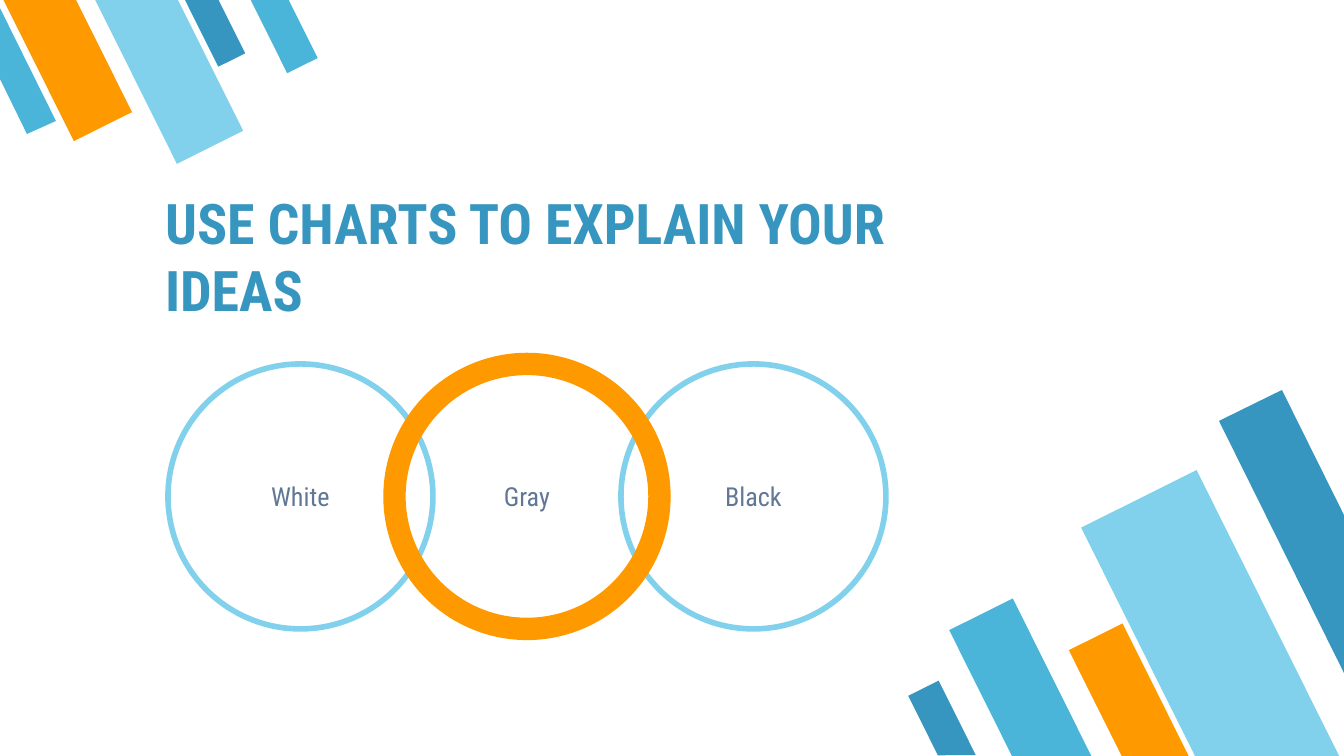
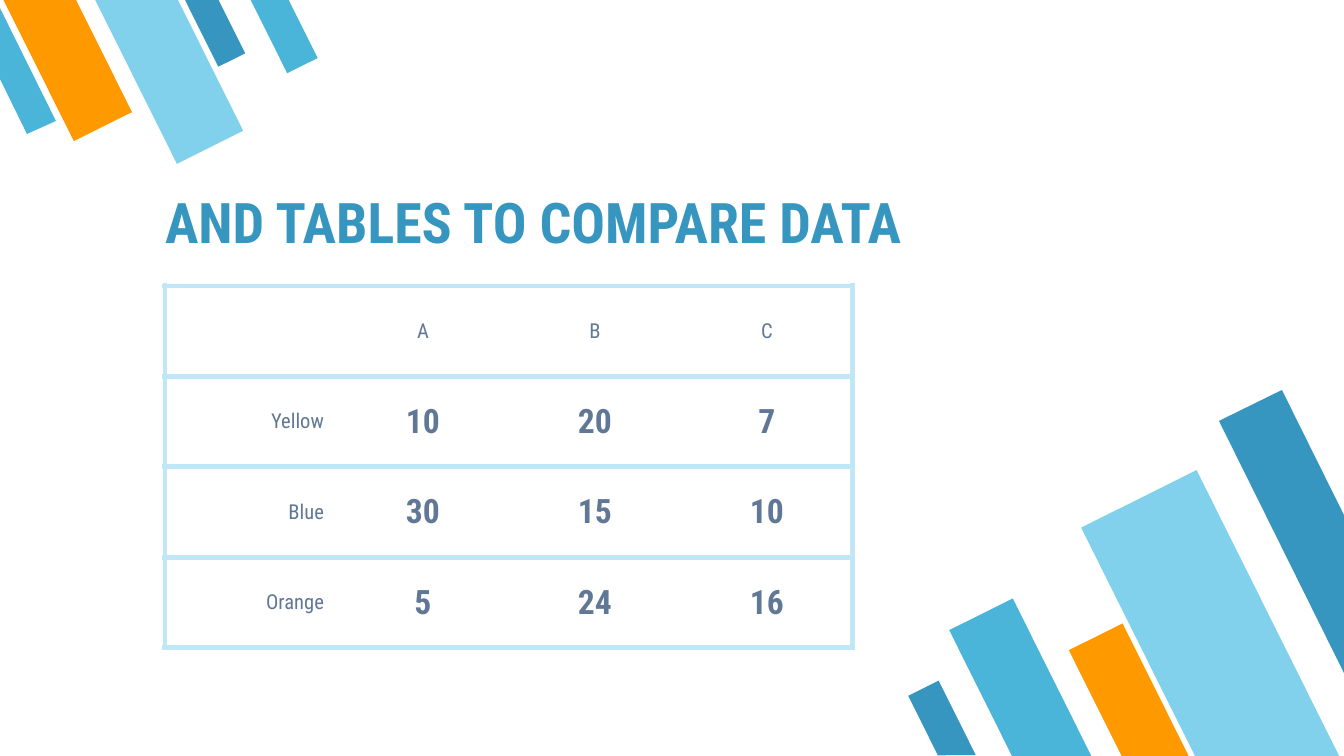
from lxml import etree
from pptx import Presentation
from pptx.dml.color import RGBColor
from pptx.enum.shapes import MSO_SHAPE
from pptx.enum.text import MSO_ANCHOR, MSO_AUTO_SIZE, PP_ALIGN
from pptx.oxml.ns import qn
from pptx.util import Pt

EMU_PER_PX = 914400 / 134.4
SLIDE_WIDTH, SLIDE_HEIGHT = 1344, 756
FONT = "Roboto Condensed"
COLORS = {
    "blue": "3796BF",
    "teal": "4BB5D9",
    "sky": "81D1EC",
    "pale": "C0E7F6",
    "orange": "FF9900",
    "text": "607896",
}
BAR = MSO_SHAPE.FLOWCHART_MANUAL_INPUT
OVAL = MSO_SHAPE.OVAL
LEFT, CENTER, RIGHT = PP_ALIGN.LEFT, PP_ALIGN.CENTER, PP_ALIGN.RIGHT
MIDDLE, BOTTOM = MSO_ANCHOR.MIDDLE, MSO_ANCHOR.BOTTOM
NO_AUTOFIT = MSO_AUTO_SIZE.NONE

TITLE_LEFT, TITLE_WIDTH, TITLE_HEIGHT = 152, 847, 99
INSET, CELL_INSET = 13, 9
BORDER_POINTS = 3

# Each bar: colour, left, top, width, height within its cluster.
TOP_BARS = [
    ("blue", 200, -11, 30, 75),
    ("orange", 35, -24, 65, 159),
    ("sky", 132, -27, 74, 184),
    ("teal", 267, -13, 34, 83),
]
TOP_EDGE_BAR = ("teal", [(27, 134), (56, 121), (0, 8), (0, 79)])
BOTTOM_BARS = [
    ("teal", 78, 215, 71, 177),
    ("sky", 239, 92, 129, 321),
    ("orange", 192, 239, 60, 149),
    ("blue", 18, 294, 34, 83),
]
BOTTOM_EDGE_BAR = ("blue", [(375, 0), (312, 31), (437, 283), (437, 125)])

TABLE_ROWS = [
    ["", "A", "B", "C"],
    ["Yellow", "10", "20", "7"],
    ["Blue", "30", "15", "10"],
    ["Orange", "5", "24", "16"],
]


def px(length):
    return round(length * EMU_PER_PX)


def color(name):
    return RGBColor.from_string(COLORS[name])


def write(frame, text, size=14, color_name="text", bold=False, align=CENTER):
    paragraph = frame.paragraphs[0]
    paragraph.alignment = align
    run = paragraph.add_run()
    run.text = text
    run.font.name = FONT
    run.font.size = Pt(size)
    run.font.bold = bold
    run.font.color.rgb = color(color_name)


def set_insets(target, horizontal, vertical):
    target.margin_left = target.margin_right = px(horizontal)
    target.margin_top = target.margin_bottom = px(vertical)


def paint_bar(shape, color_name):
    shape.shadow.inherit = False
    shape.fill.solid()
    shape.fill.fore_color.rgb = color(color_name)
    shape.line.fill.background()


def add_bar_cluster(slide, left, top, bars, edge_bar, rotation):
    """Draw slanted bars plus the one that is cut off by the slide edge."""
    shapes = []
    for name, bar_left, bar_top, width, height in bars:
        shape = slide.shapes.add_shape(
            BAR, px(left + bar_left), px(top + bar_top), px(width), px(height))
        shape.rotation = rotation
        shape.element.spPr.find(qn("a:xfrm")).set("flipH", "1")
        paint_bar(shape, name)
        shapes.append(shape)

    name, corners = edge_bar
    points = [(left + x, top + y) for x, y in corners]
    builder = slide.shapes.build_freeform(*points[0], scale=EMU_PER_PX)
    builder.add_line_segments(points[1:], close=True)
    shape = builder.convert_to_shape()
    paint_bar(shape, name)
    return shapes + [shape]


def decorate_layout(layout, slide):
    """Draw both clusters and move them to the layout, behind its text."""
    bars = add_bar_cluster(slide, 907, 390, BOTTOM_BARS, BOTTOM_EDGE_BAR, 153.5)
    bars += add_bar_cluster(slide, 0, 0, TOP_BARS, TOP_EDGE_BAR, 333.5)
    for position, shape in enumerate(bars, start=2):
        layout.shapes.element.insert(position, shape.element)


def add_title(slide, text, top):
    title = slide.shapes.title
    title.left, title.top = px(TITLE_LEFT), px(top)
    title.width, title.height = px(TITLE_WIDTH), px(TITLE_HEIGHT)
    frame = title.text_frame
    frame.word_wrap = True
    frame.auto_size = NO_AUTOFIT
    frame.vertical_anchor = BOTTOM
    set_insets(frame, INSET, INSET)
    write(frame, text, size=30, color_name="blue", bold=True, align=LEFT)


def add_circles(slide, left, top, width, diameter):
    """Spread three overlapping circles over the width, the middle one in front."""
    step = (width - diameter) / 2
    circles = [(0, "White", "sky", 3), (2, "Black", "sky", 3),
               (1, "Gray", "orange", 12)]
    for column, label, line_color, line_points in circles:
        circle = slide.shapes.add_shape(
            OVAL, px(left + column * step), px(top), px(diameter), px(diameter))
        circle.shadow.inherit = False
        circle.fill.background()
        circle.line.color.rgb = color(line_color)
        circle.line.width = Pt(line_points)
        frame = circle.text_frame
        frame.word_wrap = True
        frame.vertical_anchor = MIDDLE
        set_insets(frame, INSET, INSET)
        write(frame, label)


def set_borders(cell, visible):
    """Rule the sides named in visible (L, R, T, B) and clear the others."""
    properties = cell._tc.get_or_add_tcPr()
    for position, side in enumerate("LRTB"):
        line = etree.Element(qn(f"a:ln{side}"), w=str(Pt(BORDER_POINTS)))
        if side in visible:
            fill = etree.SubElement(line, qn("a:solidFill"))
            etree.SubElement(fill, qn("a:srgbClr"), val=COLORS["pale"])
        else:
            etree.SubElement(line, qn("a:noFill"))
        properties.insert(position, line)


def add_data_table(slide, left, top, width, height):
    row_count, column_count = len(TABLE_ROWS), len(TABLE_ROWS[0])
    table = slide.shapes.add_table(
        row_count, column_count, px(left), px(top), px(width), px(height)).table
    table.first_row = table.horz_banding = False
    for row, values in enumerate(TABLE_ROWS):
        for column, value in enumerate(values):
            cell = table.cell(row, column)
            cell.fill.background()
            cell.vertical_anchor = MIDDLE
            set_insets(cell, INSET, CELL_INSET)
            sides = {0: "LTB", column_count - 1: "RTB"}
            set_borders(cell, sides.get(column, "TB"))
            if value:
                is_number = row > 0 and column > 0
                write(cell.text_frame, value, size=18 if is_number else 11,
                      bold=is_number, align=CENTER if column else RIGHT)


def main():
    presentation = Presentation()
    presentation.slide_width = px(SLIDE_WIDTH)
    presentation.slide_height = px(SLIDE_HEIGHT)
    layout = presentation.slide_layouts.get_by_name("Title Only")

    chart_slide = presentation.slides.add_slide(layout)
    decorate_layout(layout, chart_slide)
    add_title(chart_slide, "USE CHARTS TO EXPLAIN YOUR IDEAS", top=237)
    add_circles(chart_slide, 168, 364, 718, 265)

    table_slide = presentation.slides.add_slide(layout)
    add_title(table_slide, "AND TABLES TO COMPARE DATA", top=169)
    add_data_table(table_slide, 165, 286, 688, 362)

    presentation.save("out.pptx")


if __name__ == "__main__":
    main()
